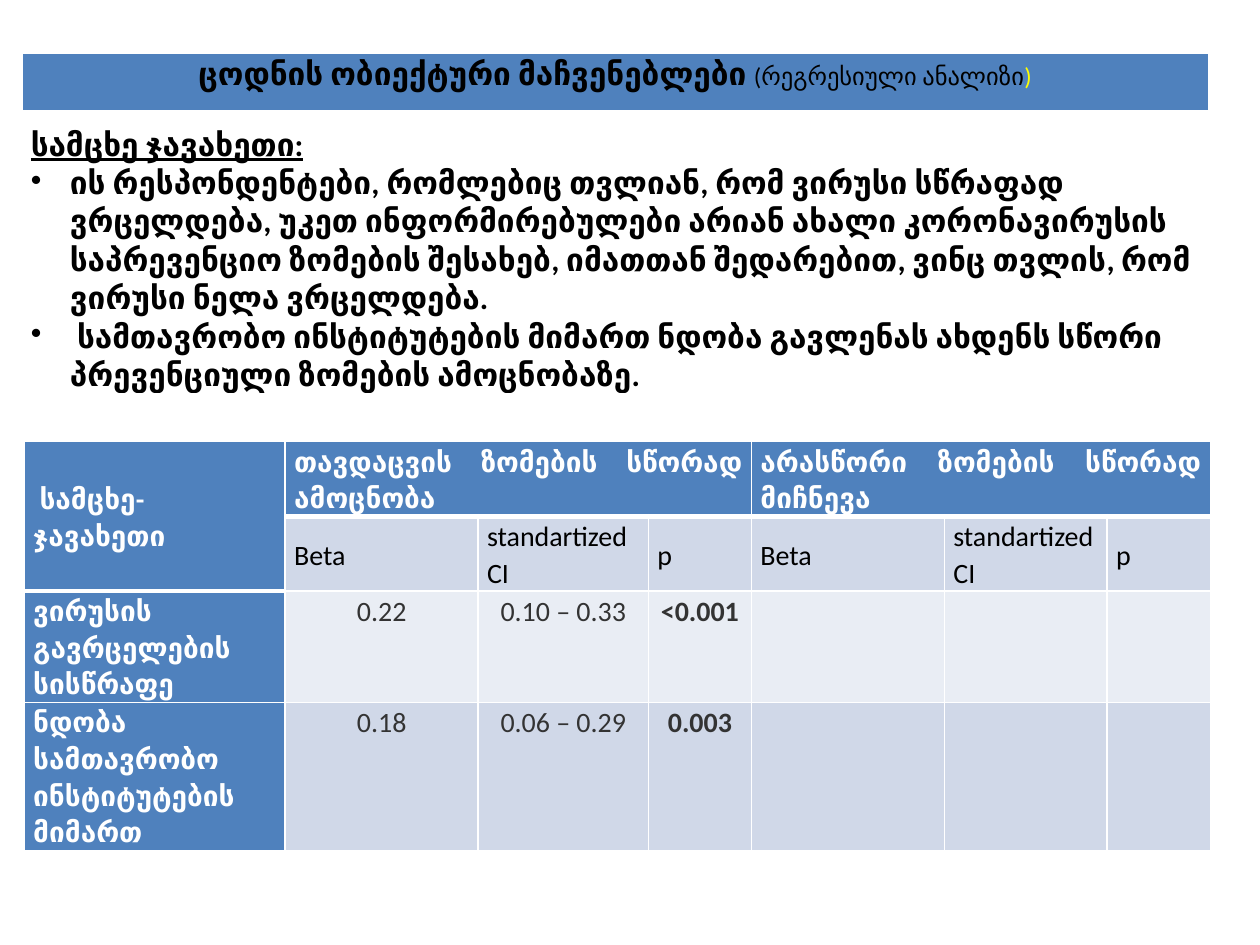
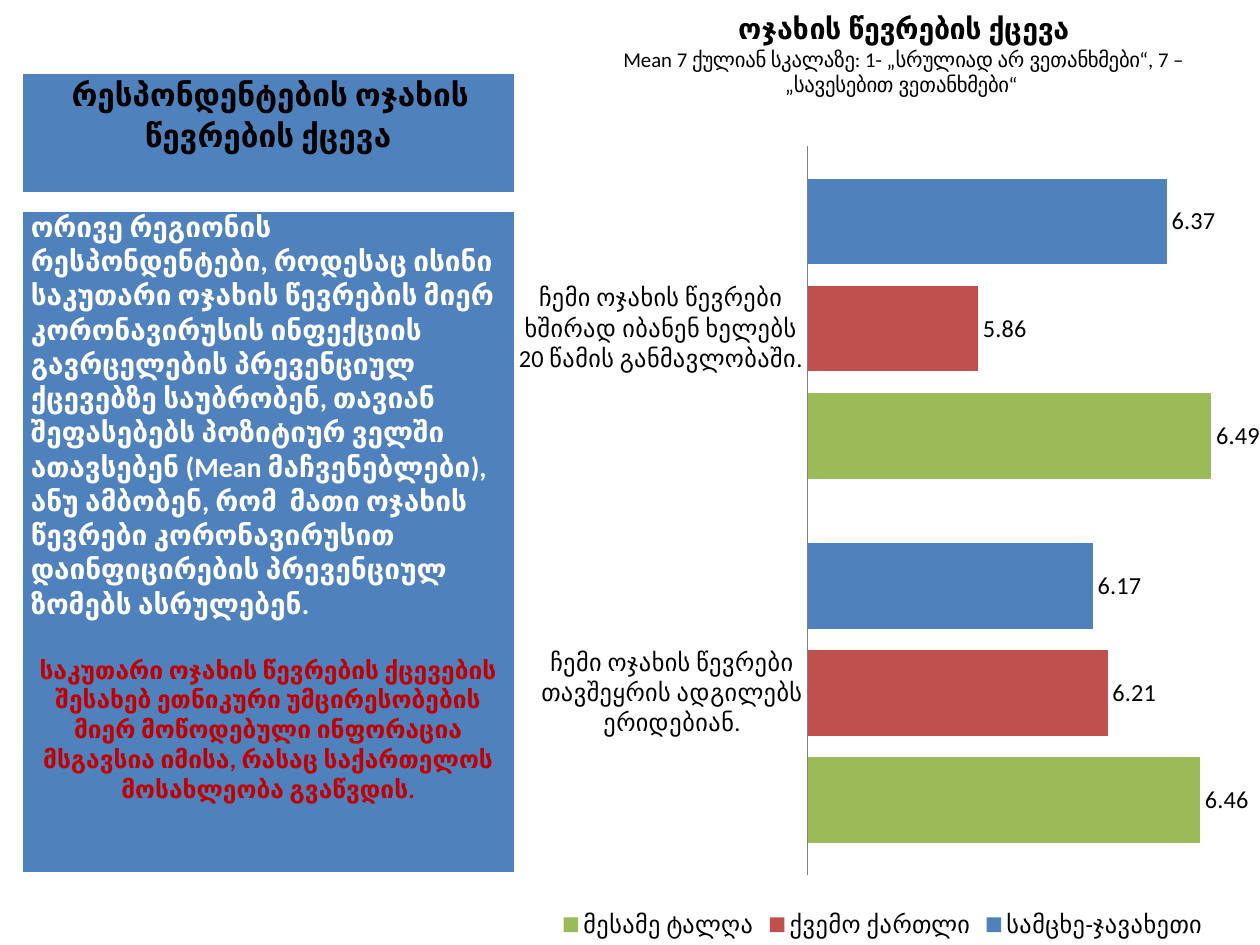
from dataclasses import dataclass

from lxml import etree
from pptx import Presentation
from pptx.chart.data import CategoryChartData
from pptx.dml.color import RGBColor
from pptx.enum.chart import XL_CHART_TYPE, XL_LEGEND_POSITION, XL_TICK_LABEL_POSITION, XL_TICK_MARK
from pptx.enum.text import MSO_ANCHOR, PP_ALIGN
from pptx.oxml.ns import qn
from pptx.util import Cm, Pt

BAR = XL_CHART_TYPE.BAR_CLUSTERED
LEGEND_BOTTOM = XL_LEGEND_POSITION.BOTTOM
NO_LABELS = XL_TICK_LABEL_POSITION.NONE
NO_TICKS = XL_TICK_MARK.NONE
TOP, MIDDLE = MSO_ANCHOR.TOP, MSO_ANCHOR.MIDDLE
LEFT, CENTER, JUSTIFY = PP_ALIGN.LEFT, PP_ALIGN.CENTER, PP_ALIGN.JUSTIFY

FONT = "Calibri"
BLUE, RED, GREEN = "4F81BD", "C0504D", "9BBB59"
BLACK, WHITE, YELLOW, DARK_RED = "000000", "FFFFFF", "FFFF00", "C00000"
GREY, AXIS_GREY = "333333", "808080"
BAND_DARK, BAND_LIGHT = "D0D8E8", "E9EDF4"
LOOSE = 1.07
SIDE_MARGIN = Cm(0.18)
BULLET_INDENT = Cm(0.79)
BLANK_LAYOUT = 6


@dataclass
class Box:
    left: float
    top: float
    width: float
    height: float

    def lengths(self) -> tuple:
        return Cm(self.left), Cm(self.top), Cm(self.width), Cm(self.height)


@dataclass
class Span:
    text: str
    size: float = 18
    bold: bool = True
    color: str = BLACK
    underline: bool = False


@dataclass
class Para:
    spans: list[Span]
    align: PP_ALIGN = LEFT
    loose: bool = False
    before: float = 0
    after: float = 0
    bullet: bool = False


@dataclass
class Entry:
    row: int
    column: int
    text: str
    color: str = WHITE
    bold: bool = True
    align: PP_ALIGN = JUSTIFY
    anchor: MSO_ANCHOR = MIDDLE


def rgb(color: str) -> RGBColor:
    return RGBColor.from_string(color)


def paint(target, color: str) -> None:
    target.fill.solid()
    target.fill.fore_color.rgb = rgb(color)


def format_font(font, *, size: float, bold: bool = False, color: str = BLACK,
                underline: bool = False) -> None:
    font.name, font.size, font.bold = FONT, Pt(size), bold
    font.underline = underline
    font.color.rgb = rgb(color)


def write(para, text: str, **style) -> None:
    """Add one formatted run to a paragraph."""
    run = para.add_run()
    run.text = text
    format_font(run.font, **style)


# Table cells

def add_bullet(para) -> None:
    props = para._p.get_or_add_pPr()
    props.set("marL", str(BULLET_INDENT))
    props.set("indent", str(-BULLET_INDENT))
    etree.SubElement(props, qn("a:buChar"), char="•")


def write_paras(frame, paras: list[Para]) -> None:
    for index, item in enumerate(paras):
        para = frame.add_paragraph() if index else frame.paragraphs[0]
        para.alignment = item.align
        if item.loose:
            para.line_spacing = LOOSE
        if item.before:
            para.space_before = Pt(item.before)
        if item.after:
            para.space_after = Pt(item.after)
        if item.bullet:
            add_bullet(para)
        for span in item.spans:
            write(para, span.text, size=span.size, bold=span.bold,
                  color=span.color, underline=span.underline)


def format_cell(cell, color: str, bottom_line: float, top_margin: float = 0) -> None:
    props = cell._tc.get_or_add_tcPr()
    for side, width in (("L", 1), ("R", 1), ("T", 1), ("B", bottom_line)):
        line = etree.SubElement(props, qn(f"a:ln{side}"), w=str(Pt(width)))
        solid = etree.SubElement(line, qn("a:solidFill"))
        etree.SubElement(solid, qn("a:srgbClr"), val=WHITE)
    paint(cell, color)
    cell.margin_left = cell.margin_right = SIDE_MARGIN
    cell.margin_top, cell.margin_bottom = Cm(top_margin), 0


def add_band(page, box: Box, color: str, paras: list[Para]) -> None:
    """Place a one-cell table holding a title or body text."""
    cell = page.shapes.add_table(1, 1, *box.lengths()).table.cell(0, 0)
    format_cell(cell, color, 3)
    write_paras(cell.text_frame, paras)


def add_page(deck, title_box: Box, title: list[Span], body_box: Box, body_color: str,
             body: list[Para]):
    page = deck.slides.add_slide(deck.slide_layouts[BLANK_LAYOUT])
    add_band(page, title_box, BLUE, [Para(title, CENTER, loose=True)])
    add_band(page, body_box, body_color, body)
    return page


# Regression table

def add_regression_table(page, box: Box, widths: list[float], heights: list[float],
                         entries: list[Entry]) -> None:
    table = page.shapes.add_table(len(heights), len(widths), *box.lengths()).table
    for column, width in zip(table.columns, widths):
        column.width = Cm(width)
    for row, height in zip(table.rows, heights):
        row.height = Cm(height)
    for row in range(len(heights)):
        for column in range(len(widths)):
            header = row == 0 or column == 0
            color = BLUE if header else BAND_LIGHT if row == 2 else BAND_DARK
            thick = row == 0 or (row, column) == (1, 0)
            format_cell(table.cell(row, column), color, 3 if thick else 1, 0.03)
    for first, last in (((0, 0), (1, 0)), ((0, 1), (0, 3)), ((0, 4), (0, 6))):
        table.cell(*first).merge(table.cell(*last))
    for entry in entries:
        cell = table.cell(entry.row, entry.column)
        cell.vertical_anchor = entry.anchor
        span = Span(entry.text, 16, entry.bold, entry.color)
        write_paras(cell.text_frame, [Para([span], entry.align, loose=True, after=8)])


def regression_entries() -> list[Entry]:
    entries = [
        Entry(0, 0, " სამცხე-ჯავახეთი", align=LEFT),
        Entry(0, 1, "თავდაცვის ზომების სწორად ამოცნობა"),
        Entry(0, 4, "არასწორი ზომების სწორად მიჩნევა"),
        Entry(2, 0, "ვირუსის გავრცელების სისწრაფე"),
        Entry(3, 0, "ნდობა სამთავრობო ინსტიტუტების მიმართ", align=LEFT, anchor=TOP),
    ]
    measures = ["Beta", "standartized CI", "p"] * 2
    entries += [Entry(1, column, text, BLACK, False)
                for column, text in enumerate(measures, start=1)]
    results = [["0.22", "0.10 – 0.33", "<0.001"], ["0.18", "0.06 – 0.29", "0.003"]]
    for row, values in enumerate(results, start=2):
        entries += [Entry(row, column, text, GREY, column == 3, CENTER, TOP)
                    for column, text in enumerate(values, start=1)]
    return entries


# Behaviour chart

def set_layout(parent, position: int, inner: bool = False, **percents: float) -> None:
    """Fix the place of a chart element, in percent of the chart."""
    for old in parent.findall(qn("c:layout")):
        parent.remove(old)
    layout = etree.Element(qn("c:layout"))
    parent.insert(position, layout)
    manual = etree.SubElement(layout, qn("c:manualLayout"))
    if inner:
        etree.SubElement(manual, qn("c:layoutTarget"), val="inner")
    for axis in ("x", "y"):
        etree.SubElement(manual, qn(f"c:{axis}Mode"), val="edge")
    for name, percent in percents.items():
        etree.SubElement(manual, qn(f"c:{name}"), val=str(percent / 100))


def add_behaviour_chart(page, box: Box) -> None:
    data = CategoryChartData(number_format="###0.00")
    data.categories = ["ჩემი ოჯახის წევრები ხშირად იბანენ ხელებს 20 წამის განმავლობაში.",
                       "ჩემი ოჯახის წევრები თავშეყრის ადგილებს ერიდებიან."]
    regions = [("სამცხე-ჯავახეთი", (6.37, 6.17), BLUE),
               ("ქვემო ქართლი", (5.86, 6.21), RED),
               ("მესამე ტალღა", (6.49, 6.46), GREEN)]
    for name, values, _ in regions:
        data.add_series(name, values)
    chart = page.shapes.add_chart(BAR, *box.lengths(), data).chart
    format_font(chart.font, size=14)

    frame = chart.chart_title.text_frame
    write(frame.paragraphs[0], "ოჯახის წევრების ქცევა", size=16.5, bold=True)
    write(frame.add_paragraph(),
          "Mean 7 ქულიან სკალაზე: 1- „სრულიად არ ვეთანხმები“, 7 – „სავესებით ვეთანხმები“ ",
          size=12)
    set_layout(chart.chart_title._element, 1, x=14.3, y=0.6)

    plot = chart.plots[0]
    plot.gap_width, plot.overlap, plot.vary_by_categories = 75, -25, False
    for series, (_, _, color) in zip(plot.series, regions):
        paint(series.format, color)
        labels = series.data_labels
        labels.show_value = True
        labels.number_format, labels.number_format_is_linked = "###0.00", False

    categories, scale = chart.category_axis, chart.value_axis
    categories.reverse_order = True
    categories.major_tick_mark = scale.major_tick_mark = NO_TICKS
    categories.format.line.color.rgb = rgb(AXIS_GREY)
    scale.minimum_scale, scale.maximum_scale = 5.4, 6.6
    scale.has_major_gridlines = False
    scale.tick_label_position = NO_LABELS
    scale.tick_labels.number_format = "###0.00"
    scale.format.line.fill.background()
    plot_area = chart._chartSpace.find(f".//{qn('c:plotArea')}")
    set_layout(plot_area, 0, inner=True, x=39.8, y=15.5, w=60.2, h=77.1)

    chart.has_legend = True
    chart.legend.position = LEGEND_BOTTOM
    chart.legend.include_in_layout = False


def build_regression_page(deck) -> None:
    title = [Span("ცოდნის ობიექტური მაჩვენებლები "),
             Span("(რეგრესიული ანალიზი", 14, False),
             Span(")", 14, False, YELLOW)]
    findings = [
        "ის რესპონდენტები, რომლებიც თვლიან, რომ ვირუსი სწრაფად ვრცელდება, უკეთ "
        "ინფორმირებულები არიან ახალი კორონავირუსის საპრევენციო ზომების შესახებ, იმათთან "
        "შედარებით, ვინც თვლის, რომ ვირუსი ნელა ვრცელდება.",
        " სამთავრობო ინსტიტუტების მიმართ ნდობა გავლენას ახდენს სწორი პრევენციული ზომების "
        "ამოცნობაზე.",
    ]
    body = [Para([Span("სამცხე ჯავახეთი:", underline=True)])]
    body += [Para([Span(text)], bullet=True) for text in findings]
    page = add_page(deck, Box(0.44, 1.07, 23.92, 1.2), title,
                    Box(0.44, 2.54, 23.92, 5.08), WHITE, body)
    add_regression_table(page, Box(0.49, 8.9, 23.91, 8.15),
                         [5.26, 3.89, 3.43, 2.08, 3.89, 3.28, 2.08],
                         [1.46, 1.5, 2.24, 2.95], regression_entries())


def build_behaviour_page(deck) -> None:
    title = [Span(" ", 11, color=WHITE), Span("რესპონდენტების ოჯახის წევრების ქცევა")]
    summary = (
        "ორივე რეგიონის რესპონდენტები, როდესაც ისინი საკუთარი ოჯახის წევრების მიერ "
        "კორონავირუსის ინფექციის გავრცელების პრევენციულ ქცევებზე საუბრობენ, თავიან "
        "შეფასებებს პოზიტიურ ველში ათავსებენ (Mean მაჩვენებლები), ანუ ამბობენ, რომ  მათი "
        "ოჯახის წევრები კორონავირუსით დაინფიცირების პრევენციულ ზომებს ასრულებენ.")
    conclusion = (
        "საკუთარი ოჯახის წევრების ქცევების შესახებ ეთნიკური უმცირესობების მიერ მოწოდებული "
        "ინფორაცია მსგავსია იმისა, რასაც საქართელოს მოსახლეობა გვაწვდის.")
    body = [Para([Span(summary, 16, color=WHITE)]),
            Para([Span(conclusion, 14, color=DARK_RED)], CENTER, before=19.5)]
    page = add_page(deck, Box(0.44, 1.48, 9.93, 2.44), title,
                    Box(0.44, 4.25, 9.93, 13.37), BLUE, body)
    add_behaviour_chart(page, Box(10.36, 0, 15.04, 19.05))


def main() -> None:
    deck = Presentation()
    deck.slide_width, deck.slide_height = Cm(25.4), Cm(19.05)
    build_regression_page(deck)
    build_behaviour_page(deck)
    deck.save("out.pptx")


if __name__ == "__main__":
    main()
